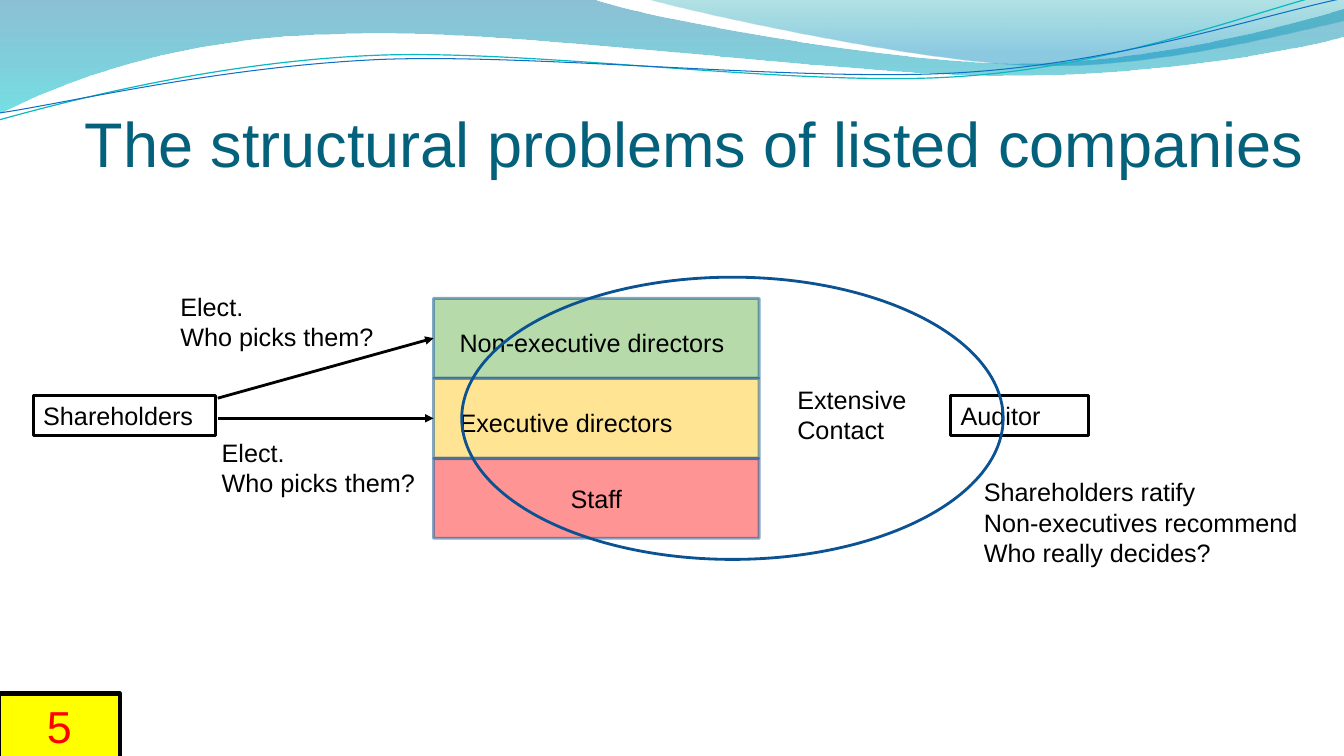
from lxml import etree
from pptx import Presentation
from pptx import util as u
from pptx.dml.color import RGBColor
from pptx.enum import shapes, text
from pptx.oxml.ns import qn

RECT = shapes.MSO_SHAPE.RECTANGLE
OVAL = shapes.MSO_SHAPE.OVAL
BLACK, NAVY = "000000", "0B5292"
UNITS = 1000

BANDS = [
    ([(0, 0), (5.87, -0.01), (6.34, 0.17, 8.85, 0.63, 10.11, 0.63),
      (11.38, 0.63, 12.78, 0.26, 13.33, 0.09), (13.35, 0.36),
      (13.11, 0.44, 11.6, 0.76, 9.94, 0.75), (8.29, 0.75, 5.09, 0.28, 3.43, 0.34),
      (1.72, 0.36, 0.61, 0.83, -0.01, 1.13)],
     [(0, "0074A1", 45), (1, "00C6CF", 55)]),
    ([(6.39, -0.01), (6.79, 0.11, 9.09, 0.62, 10.25, 0.65),
      (11.41, 0.69, 12.82, 0.32, 13.33, 0.21), (13.33, 0)],
     [(0, "00A1A9", 30), (0.8, "008BBF", 45)]),
]
WAVES = [
    ([(-0.01, 1.19), (0.64, 1.01, 2.11, 0.62, 3.69, 0.55),
      (5.27, 0.48, 7.9, 0.87, 9.5, 0.76), (11.1, 0.66, 12.52, 0.08, 13.31, -0.1)],
     "0AB8BF", 0.85),
    ([(0, 1.12), (0.63, 1.03, 2.18, 0.66, 3.78, 0.59),
      (5.37, 0.53, 7.96, 0.82, 9.55, 0.72), (11.15, 0.62, 12.55, 0.14, 13.34, -0.02)],
     "0F6FC6", 0.75),
]


def rgb(value):
    return RGBColor.from_string(value)


def set_alpha(color_el, percent):
    etree.SubElement(color_el, qn("a:alpha")).set("val", str(percent * 1000))


def set_solid_alpha(parent, percent):
    set_alpha(parent.find(qn("a:solidFill")).find(qn("a:srgbClr")), percent)


def set_line(sp, color, width):
    sp.line.color.rgb = rgb(color)
    sp.line.width = u.Pt(width)


def to_units(step):
    return [round(value * UNITS) for value in step]


def add_curve(slide, steps, close):
    steps = [to_units(step) for step in steps]
    ends = [step[-2:] for step in steps]
    left, top = (min(values) for values in zip(*ends))
    builder = slide.shapes.build_freeform(*ends[0], scale=u.Inches(1) / UNITS)
    builder.add_line_segments(ends[1:], close=close)
    sp = builder.convert_to_shape()
    sp.shadow.inherit = False
    segments = list(sp._element.spPr.iter(qn("a:lnTo")))
    for segment, step in zip(segments, steps[1:]):
        if len(step) == 6:
            bend = etree.Element(qn("a:cubicBezTo"))
            for x, y in zip(step[::2], step[1::2]):
                pt = etree.SubElement(bend, qn("a:pt"))
                pt.set("x", str(x - left))
                pt.set("y", str(y - top))
            segment.getparent().replace(segment, bend)
    return sp


def add_band(slide, steps, stops):
    sp = add_curve(slide, steps, True)
    sp.line.fill.background()
    sp.fill.gradient()
    sp.fill.gradient_angle = 270
    for stop, (position, color, _) in zip(sp.fill.gradient_stops, stops):
        stop.position = position
        stop.color.rgb = rgb(color)
    for stop_el, (_, _, alpha) in zip(sp._element.spPr.iter(qn("a:gs")), stops):
        set_alpha(stop_el[0], alpha)


def add_wave(slide, steps, color, width):
    sp = add_curve(slide, steps, False)
    sp.fill.background()
    set_line(sp, color, width)


def write(sp, words, size=18, color=BLACK, align=text.PP_ALIGN.LEFT,
          anchor=text.MSO_ANCHOR.TOP):
    tf = sp.text_frame
    tf.word_wrap = True
    tf.vertical_anchor = anchor
    tf.text = words
    for p in tf.paragraphs:
        p.alignment = align
        for r in p.runs:
            r.font.size = u.Pt(size)
            r.font.name = "Arial"
            r.font.color.rgb = rgb(color)


def add_label(slide, box, words, **style):
    sp = slide.shapes.add_textbox(*map(u.Inches, box))
    write(sp, words, **style)
    return sp


def add_box(slide, kind, box, fill=None, line=BLACK, width=2):
    sp = slide.shapes.add_shape(kind, *map(u.Inches, box))
    sp.shadow.inherit = False
    if fill:
        sp.fill.solid()
        sp.fill.fore_color.rgb = rgb(fill)
    else:
        sp.fill.background()
    set_line(sp, line, width)
    return sp


def add_layer(slide, index, fill):
    sp = add_box(slide, RECT, (4.3, 2.96 + index * 0.795, 3.23, 0.79), fill, NAVY)
    set_solid_alpha(sp._element.spPr, 42)
    set_solid_alpha(sp.line._ln, 50)
    return sp


def add_arrow(slide, x, y, target):
    line = slide.shapes.add_connector(
        shapes.MSO_CONNECTOR.STRAIGHT, u.Inches(x), u.Inches(y),
        target.left, target.top + target.height // 2)
    line.end_connect(target, 1)
    set_line(line, BLACK, 2)
    etree.SubElement(line.line._ln, qn("a:tailEnd")).set("type", "triangle")
    etree.SubElement(line._element.spPr, qn("a:effectLst"))


def main():
    prs = Presentation()
    prs.slide_width, prs.slide_height = u.Inches(13.33), u.Inches(7.5)
    slide = prs.slides.add_slide(prs.slide_layouts[6])

    for steps, stops in BANDS:
        add_band(slide, steps, stops)
    for steps, color, width in WAVES:
        add_wave(slide, steps, color, width)

    title = add_label(slide, (0.84, 0.92, 12.11, 0.87),
                      "The structural problems of listed companies",
                      size=45, color="04617B", anchor=text.MSO_ANCHOR.BOTTOM)
    tf = title.text_frame
    tf.margin_left = tf.margin_right = tf.margin_bottom = 0

    non_executives, executives, staff = [
        add_layer(slide, i, fill)
        for i, fill in enumerate(("55A839", "FFC000", "FF0000"))]
    add_label(slide, (4.46, 3.2, 2.83, 0.4), "Non-executive directors")
    add_label(slide, (4.46, 3.99, 2.68, 0.4), "Executive directors")
    write(staff, "Staff", align=text.PP_ALIGN.CENTER, anchor=text.MSO_ANCHOR.MIDDLE)

    write(add_box(slide, RECT, (0.33, 3.92, 1.81, 0.4)), "Shareholders")
    add_arrow(slide, 2.16, 3.95, non_executives)
    add_arrow(slide, 2.16, 4.15, executives)
    for x, y in ((1.69, 2.84), (2.1, 4.29)):
        add_label(slide, (x, y, 2.36, 0.71), "Elect.\nWho picks them?")

    write(add_box(slide, RECT, (9.43, 3.92, 1.37, 0.4)), "Auditor")
    add_box(slide, OVAL, (4.58, 2.75, 5.37, 2.8), line=NAVY)
    add_label(slide, (7.81, 3.76, 1.57, 0.71), "Extensive Contact")
    add_label(slide, (9.66, 4.68, 3.54, 1.01),
              "Shareholders ratify\nNon-executives recommend\nWho really decides?")

    number = add_box(slide, RECT, (-0.01, 6.88, 1.2, 0.64), "FFFF00", width=3)
    write(number, "5", size=32, color="FF0000", align=text.PP_ALIGN.CENTER)

    prs.save("out.pptx")


if __name__ == "__main__":
    main()
